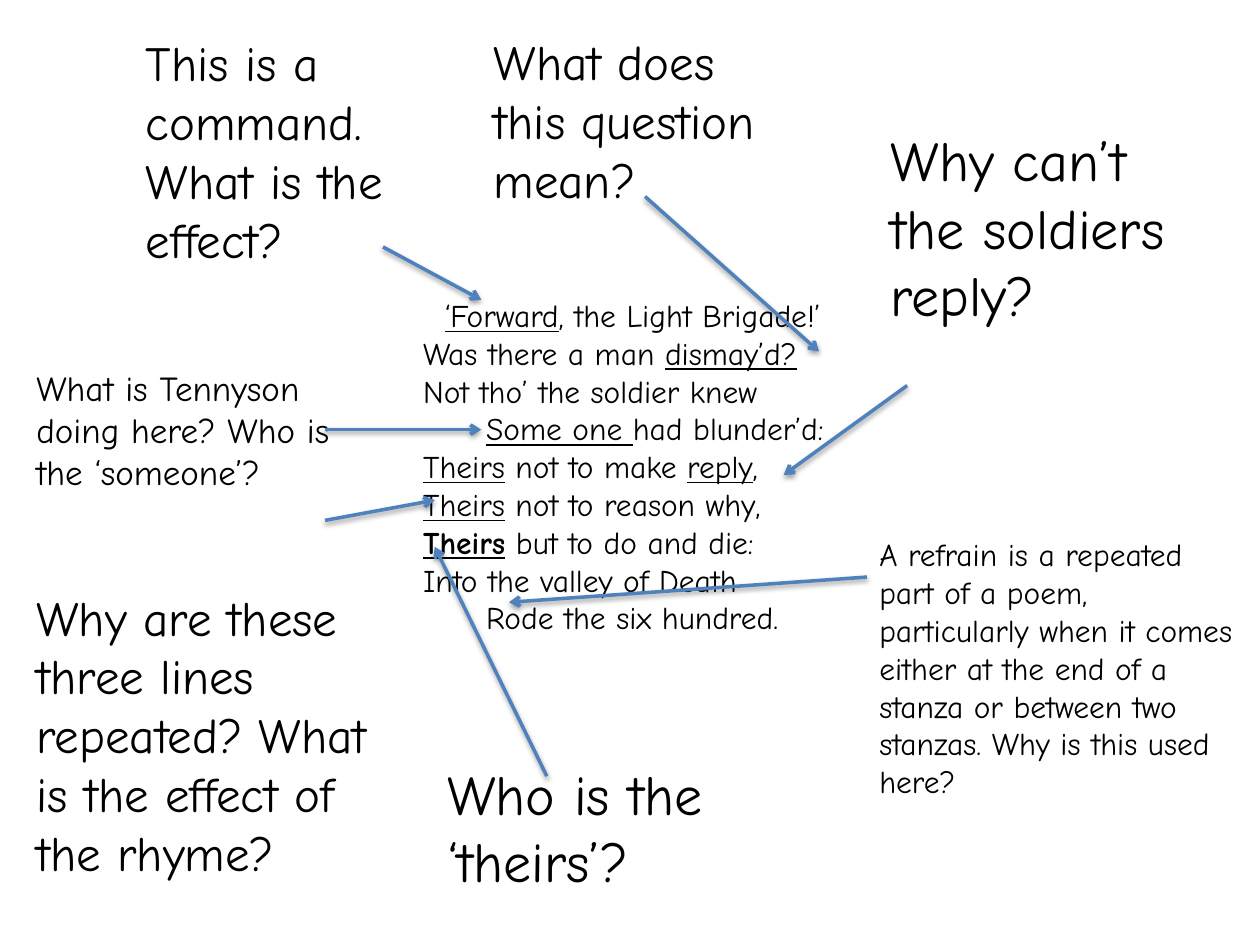
"""Build a slide of an annotated poem stanza with question notes and arrows."""
from lxml import etree
from pptx import Presentation
from pptx import util as u
from pptx.dml.color import RGBColor
from pptx.enum import shapes
from pptx.oxml import ns

THEME = {
    "font": "Comic Neue",
    "ink": RGBColor.from_string("000000"),
    "arrow": RGBColor.from_string("4F81BD"),
    "arrow_width": 2,
    "small": 18,
    "medium": 20,
    "large": 28,
    "huge": 32,
    "shadow": {"blur": 3.1, "distance": 1.6, "angle": 90, "opacity": 38},
}

POEM_AREA = (3.26, 2.3, 3.7, 2.83)
POEM = [
    (0.17, [("‘Forward", "u"), (", the Light Brigade!’", "")]),
    (0, [("Was there a man ", ""), ("dismay’d?", "u")]),
    (0, [("Not tho’ the soldier knew", "")]),
    (0.5, [("Some one ", "u"), ("had blunder’d:", "")]),
    (0, [("Theirs", "u"), (" not to make ", ""), ("reply", "u"), (",", "")]),
    (0, [("Theirs", "u"), (" not to reason why,", "")]),
    (0, [("Theirs", "bu"), (" but to do and die:", "")]),
    (0, [("Into the valley of Death", "")]),
    (0.5, [("Rode the six hundred.", "")]),
]

NOTES = [
    ("This is a command. What is the effect?", "large", (1.06, 0.21, 2.55, 1.99)),
    ("What does this question mean?", "large", (3.82, 0.2, 2.55, 1.51)),
    ("What is Tennyson doing here? Who is the ‘someone’?", "medium",
     (0.19, 2.86, 2.55, 1.11)),
    ("Why are these three lines repeated? What is the effect of the rhyme?",
     "large", (0.19, 4.61, 3.01, 2.93)),
    ("Why can’t the soldiers reply?", "huge", (6.97, 0.95, 2.55, 2.26)),
    ("A refrain is a repeated part of a poem, particularly when it comes either "
     "at the end of a stanza or between two stanzas. Why is this used here?",
     "small", (6.88, 4.2, 3.11, 2.22)),
    ("Who is the ‘theirs’?", "huge", (3.45, 5.98, 2.55, 1.72)),
]

ARROWS = [
    ((3.04, 1.96), (3.82, 2.38)),
    ((5.12, 1.56), (6.5, 2.79)),
    ((2.58, 3.41), (3.82, 3.41)),
    ((7.2, 3.06), (6.22, 3.77)),
    ((2.58, 4.13), (3.45, 3.97)),
    ((4.34, 6.16), (3.45, 4.34)),
    ((6.88, 4.58), (4.04, 4.78)),
]


def add_text(page, area, size, lines):
    box = page.shapes.add_textbox(*map(u.Inches, area))
    frame = box.text_frame
    frame.word_wrap = True
    for index, (indent, spans) in enumerate(lines):
        para = frame.add_paragraph() if index else frame.paragraphs[0]
        if indent:
            properties = para._p.get_or_add_pPr()
            properties.set("marL", "0")
            properties.set("indent", str(u.Inches(indent)))
        for words, style in spans:
            span = para.add_run()
            span.text = words
            span.font.name = THEME["font"]
            span.font.size = u.Pt(THEME[size])
            span.font.color.rgb = THEME["ink"]
            span.font.bold = "b" in style
            span.font.underline = "u" in style


def add_child(parent, tag, **attributes):
    values = {name: str(value) for name, value in attributes.items()}
    return etree.SubElement(parent, ns.qn(tag), values)


def add_arrow(page, start, end):
    arrow = page.shapes.add_connector(
        shapes.MSO_CONNECTOR.STRAIGHT, *map(u.Inches, start + end))
    arrow.line.color.rgb = THEME["arrow"]
    arrow.line.width = u.Pt(THEME["arrow_width"])
    add_child(arrow.line._get_or_add_ln(), "a:tailEnd", type="arrow")
    shadow = THEME["shadow"]
    effects = add_child(arrow._element.spPr, "a:effectLst")
    outer = add_child(effects, "a:outerShdw", blurRad=u.Pt(shadow["blur"]),
                      dist=u.Pt(shadow["distance"]),
                      dir=shadow["angle"] * 60000, rotWithShape=0)
    color = add_child(outer, "a:srgbClr", val=THEME["ink"])
    add_child(color, "a:alpha", val=shadow["opacity"] * 1000)


def main():
    deck = Presentation()
    deck.slide_width, deck.slide_height = u.Inches(10), u.Inches(7.5)
    page = deck.slides.add_slide(deck.slide_layouts.get_by_name("Blank"))
    add_text(page, POEM_AREA, "small", POEM)
    for words, size, area in NOTES:
        add_text(page, area, size, [(0, [(words, "")])])
    for start, end in ARROWS:
        add_arrow(page, start, end)
    deck.save("out.pptx")


if __name__ == "__main__":
    main()
